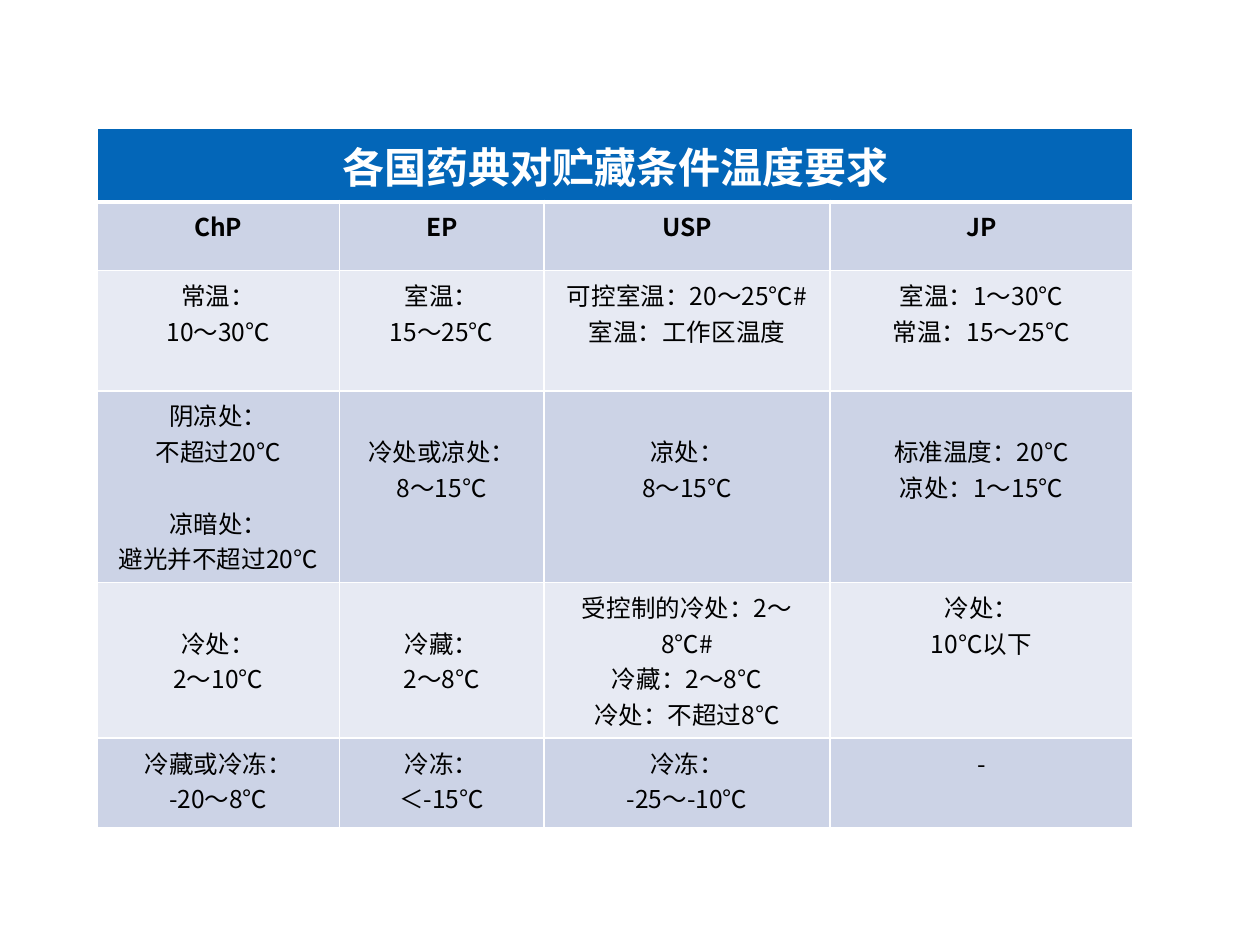
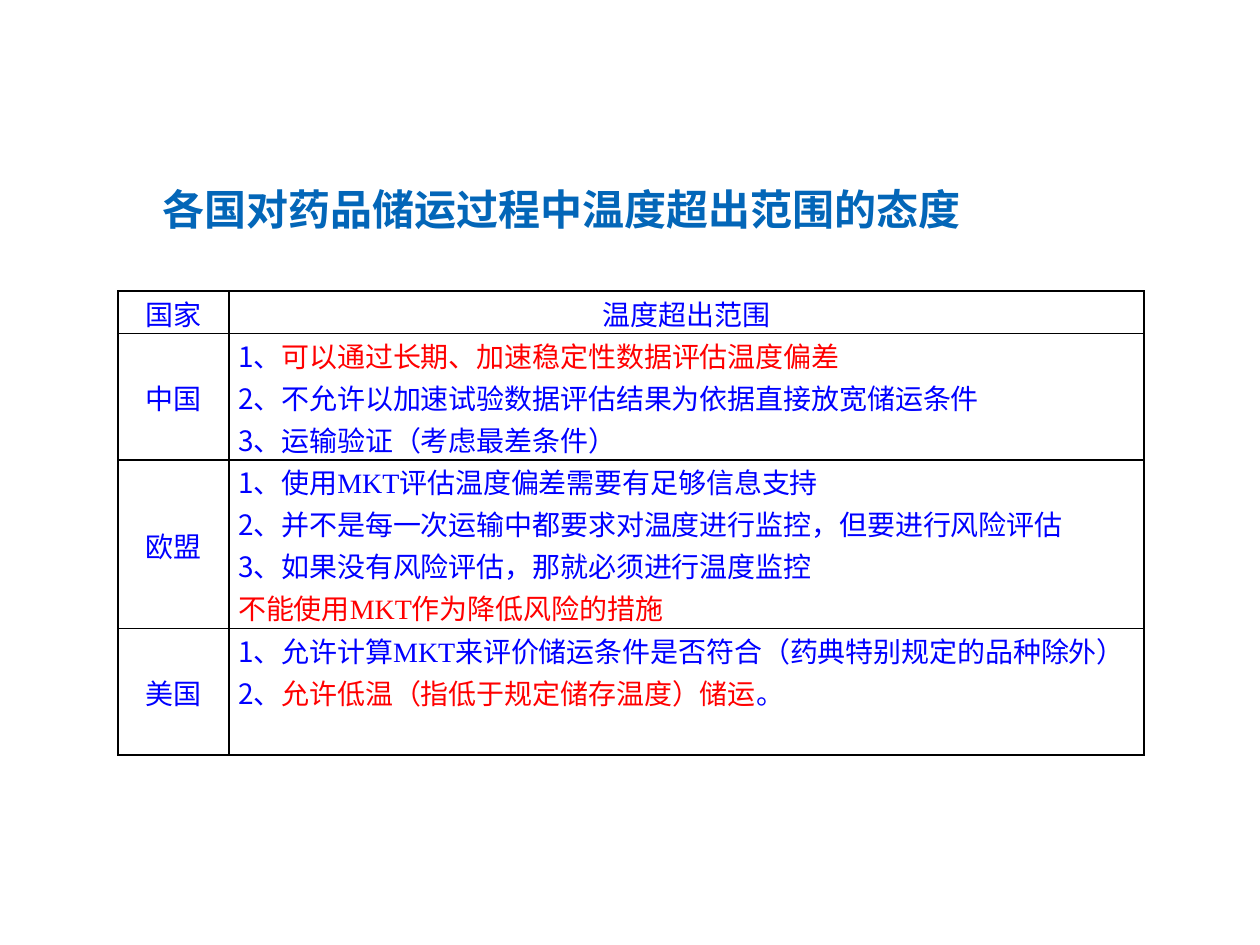
"""Two slides on drug storage temperatures, each built around a table."""
from lxml import etree
from pptx import Presentation
from pptx import util as u
from pptx.dml.color import RGBColor
from pptx.enum import text
from pptx.oxml.ns import qn

COLORS = {"title": "0366B8", "white": "FFFFFF", "black": "000000", "band": "CCD3E6",
          "light": "E7EAF3", "blue": "0000FF", "red": "FF0000"}
SANS, SERIF = "Noto Sans CJK SC", "Times New Roman"
CENTER, LEFT = text.PP_ALIGN.CENTER, text.PP_ALIGN.LEFT
MIDDLE, TOP = text.MSO_ANCHOR.MIDDLE, text.MSO_ANCHOR.TOP
LINE, GAP, INSET = 0.85, 0.72, 0.13

PHARMACOPOEIAS = ["ChP", "EP", "USP", "JP"]
STORAGE = [
    ["常温：\n10～30℃", "室温：\n15～25℃", "可控室温：20～25℃#\n室温：工作区温度",
     "室温：1～30℃\n常温：15～25℃"],
    ["阴凉处：\n不超过20℃\n\n凉暗处：\n避光并不超过20℃", "\n冷处或凉处：\n8～15℃",
     "\n凉处：\n8～15℃", "\n标准温度：20℃\n凉处：1～15℃"],
    ["\n冷处：\n2～10℃", "\n冷藏：\n2～8℃",
     "受控制的冷处：2～8℃#\n冷藏：2～8℃\n冷处：不超过8℃", "冷处：\n10℃以下"],
    ["冷藏或冷冻：\n-20～8℃", "冷冻：\n＜-15℃", "冷冻：\n-25～-10℃", "-"],
]
ATTITUDES = [
    ("中国", 3, [[("1", "blue"), ("、", "blue"), ("可以通过长期、加速稳定性数据评估温度偏差", "red")],
               [("2", "blue"), ("、不允许以加速试验数据评估结果为依据直接放宽储运条件", "blue")],
               [("3", "blue"), ("、运输验证（考虑最差条件）", "blue")]]),
    ("欧盟", 4, [[("1", "blue"), ("、使用MKT评估温度偏差需要有足够信息支持", "blue")],
               [("2", "blue"), ("、并不是每一次运输中都要求对温度进行监控，但要进行风险评估", "blue")],
               [("3", "blue"), ("、如果没有风险评估，那就必须进行温度监控", "blue")],
               [("不能使用MKT作为降低风险的措施", "red")]]),
    ("美国", 3, [[("1", "blue"), ("、允许计算MKT来评价储运条件是否符合（药典特别规定的品种除外）", "blue")],
               [("2", "blue"), ("、", "blue"), ("允许低温（指低于规定储存温度）储运", "red"),
                ("。", "blue")]]),
]


def add_run(p, content, size=14, font=SANS, color="black", bold=False):
    """Append a formatted run to a paragraph."""
    r = p.add_run()
    r.text = content
    r.font.size, r.font.name, r.font.bold = u.Pt(size), font, bold
    r.font.color.rgb = RGBColor.from_string(COLORS[color])
    ea = etree.SubElement(r.font._element, qn("a:ea"))
    ea.set("typeface", SANS)


def next_paragraph(tf, first):
    """Return the first paragraph of a frame or a new one."""
    return tf.paragraphs[0] if first else tf.add_paragraph()


def style_cell(cell, border, fill=None, top=1, bottom=1):
    """Give a cell its four borders and its fill."""
    tcPr = cell._tc.get_or_add_tcPr()
    for side, width in (("L", 1), ("R", 1), ("T", top), ("B", bottom)):
        ln = etree.SubElement(tcPr, qn(f"a:ln{side}"), w=str(u.Pt(width)))
        solid = etree.SubElement(ln, qn("a:solidFill"))
        etree.SubElement(solid, qn("a:srgbClr"), val=COLORS[border])
    if fill:
        cell.fill.solid()
        cell.fill.fore_color.rgb = RGBColor.from_string(COLORS[fill])
    else:
        cell.fill.background()


def add_grid(s, box, columns, rows):
    """Add a plain table whose columns and rows share the box in proportion."""
    left, top, width, height = box
    tbl = s.shapes.add_table(len(rows), len(columns), *map(u.Cm, box)).table
    tbl.first_row = tbl.horz_banding = False
    for col, share in zip(tbl.columns, columns):
        col.width = u.Cm(width * share / sum(columns))
    for row, share in zip(tbl.rows, rows):
        row.height = u.Cm(height * share / sum(rows))
    return tbl


def fill_storage_cell(cell, content, **fmt):
    """Write centred lines, turning each empty line into a gap."""
    cell.margin_top = cell.margin_bottom = u.Cm(INSET)
    if content.startswith("\n"):
        cell.margin_top = u.Cm(INSET + GAP)
    lines = content.strip("\n").split("\n")
    for i, line in enumerate(lines):
        if line:
            p = next_paragraph(cell.text_frame, i == 0)
            p.alignment = CENTER
            if i and not lines[i - 1]:
                p.space_before = u.Cm(GAP)
            add_run(p, line, **fmt)


def storage_slide(s, box):
    """Build the table of storage temperatures by pharmacopoeia."""
    tbl = add_grid(s, box, [4.88, 4.13, 5.76, 6.11], [1.47, 1.39, 2.42, 3.85, 3.14, 1.8])
    for c in range(4):
        style_cell(tbl.cell(0, c), "white", "title", bottom=3)
    tbl.cell(0, 0).merge(tbl.cell(0, 3))
    fill_storage_cell(tbl.cell(0, 0), "各国药典对贮藏条件温度要求", size=24, color="white", bold=True)
    for r, row in enumerate([PHARMACOPOEIAS] + STORAGE, 1):
        for c, content in enumerate(row):
            cell = tbl.cell(r, c)
            style_cell(cell, "white", "band" if r % 2 else "light", top=3 if r == 1 else 1)
            fill_storage_cell(cell, content, bold=r == 1)


def fill_attitude_cell(cell, paragraphs, align=LEFT, anchor=TOP):
    """Write paragraphs of coloured runs at a fixed line pitch."""
    style_cell(cell, "black")
    cell.margin_left = cell.margin_right = u.Cm(0.18)
    cell.margin_top = cell.margin_bottom = 0
    cell.vertical_anchor = anchor
    for i, runs in enumerate(paragraphs):
        p = next_paragraph(cell.text_frame, i == 0)
        p.alignment, p.line_spacing = align, u.Pt(24)
        for content, color in runs:
            add_run(p, content, size=16, font=SANS if content.isdigit() else SERIF, color=color)


def attitude_table(s, box):
    """Build the table of attitudes to temperature excursions."""
    tbl = add_grid(s, box, [2.24, 18.44], [1] + [lines for _, lines, _ in ATTITUDES])
    for c, heading in enumerate(["国家", "温度超出范围"]):
        fill_attitude_cell(tbl.cell(0, c), [[(heading, "blue")]], CENTER)
    for r, (country, _, points) in enumerate(ATTITUDES, 1):
        fill_attitude_cell(tbl.cell(r, 0), [[(country, "blue")]], CENTER, MIDDLE)
        fill_attitude_cell(tbl.cell(r, 1), points)


def add_title(s, box, content):
    """Add a slide title on one unwrapped line."""
    tf = s.shapes.add_textbox(*map(u.Cm, box)).text_frame
    tf.word_wrap, tf.vertical_anchor = False, MIDDLE
    tf.auto_size = text.MSO_AUTO_SIZE.SHAPE_TO_FIT_TEXT
    add_run(tf.paragraphs[0], content, size=24, color="title", bold=True)


def main():
    """Build and save both slides."""
    prs = Presentation()
    prs.slide_width, prs.slide_height = u.Cm(25.4), u.Cm(19.05)
    blank = prs.slide_layouts[6]
    storage_slide(prs.slides.add_slide(blank), (1.96, 2.58, 20.88, 14.07))
    s = prs.slides.add_slide(blank)
    attitude_table(s, (2.38, 5.87, 20.68, 11 * LINE))
    add_title(s, (3.02, 3.58, 16.76, 1.27), "各国对药品储运过程中温度超出范围的态度")
    prs.save("out.pptx")


if __name__ == "__main__":
    main()
